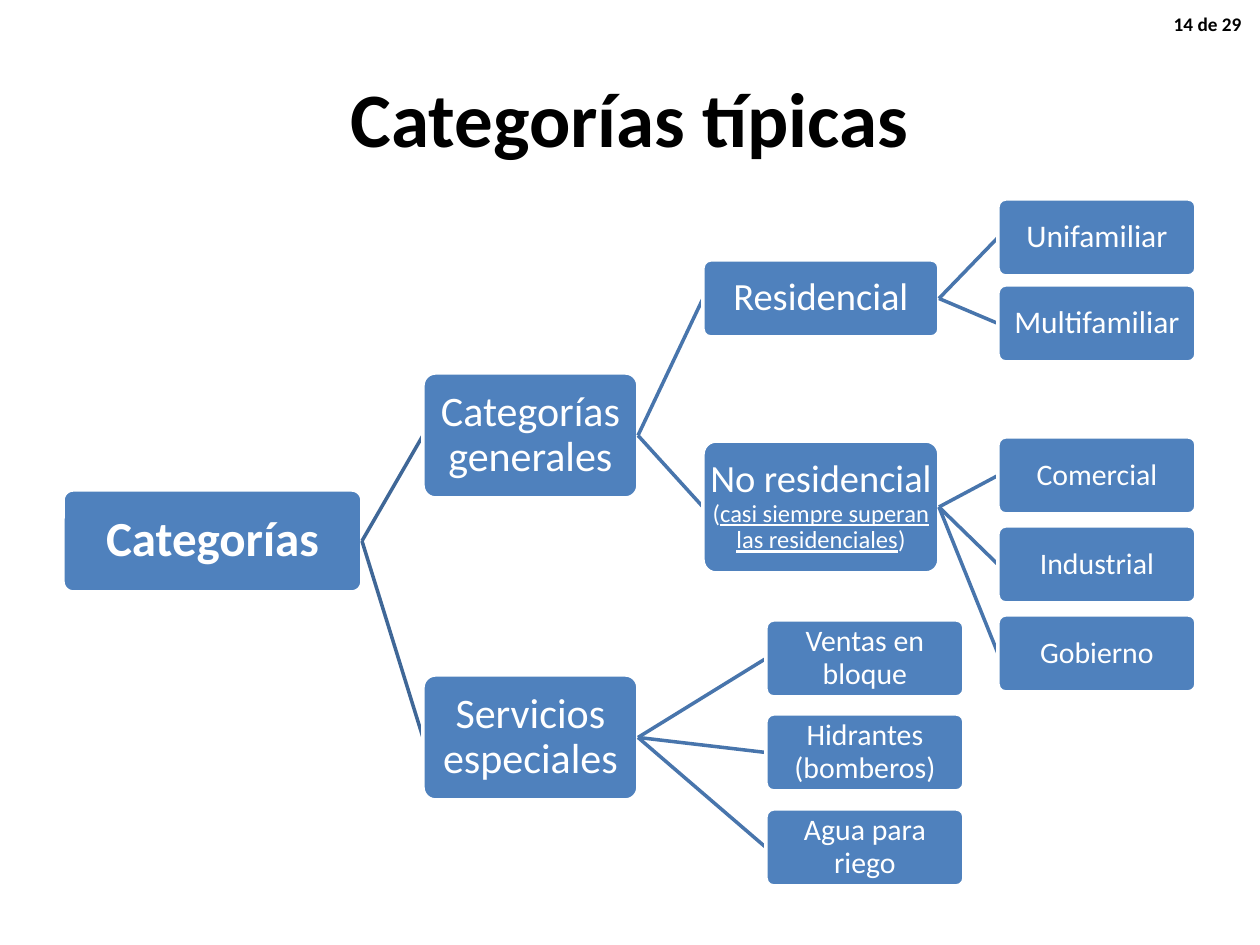
from pptx import Presentation
from pptx.dml.color import RGBColor
from pptx.enum.shapes import MSO_CONNECTOR, MSO_SHAPE
from pptx.enum.text import MSO_ANCHOR, PP_ALIGN
from pptx.oxml.ns import qn
from pptx.util import Pt
from lxml.etree import SubElement

PX = 914400 // 126
FONT = "Calibri"
COLORS = {"box": "4F81BD", "white": "FFFFFF", "black": "000000",
          "root_link": "3F6797", "link": "4875AC"}

TITLE = "Categorías típicas"
PAGE = "14 de 29"
NOTE = [("(", False), ("casi siempre superan las residenciales", True), (")", False)]
NOTE_SIZE = 14

# level: left, width, height, text size
LEVELS = {
    "root": (63, 299, 102, 28),
    "branch": (423, 215, 125, 24),
    "group": (703, 236, 77, 22),
    "group_note": (703, 236, 132, 22),
    "home": (998, 198, 77, 18),
    "business": (998, 198, 77, 17),
    "service": (766, 198, 77, 17),
}
# text, parent, level, top, side inset
NODES = [
    ("Categorías", None, "root", 490, 0),
    ("Categorías generales", "Categorías", "branch", 373, 0),
    ("Residencial", "Categorías generales", "group", 260, 0),
    ("Unifamiliar", "Residencial", "home", 199, 0),
    ("Multifamiliar", "Residencial", "home", 285, 0),
    ("No residencial", "Categorías generales", "group_note", 441, 0),
    ("Comercial", "No residencial", "business", 437, 0),
    ("Industrial", "No residencial", "business", 526, 0),
    ("Gobierno", "No residencial", "business", 615, 0),
    ("Servicios especiales", "Categorías", "branch", 675, 0),
    ("Ventas en bloque", "Servicios especiales", "service", 620, 0),
    ("Hidrantes (bomberos)", "Servicios especiales", "service", 714, 0),
    ("Agua para riego", "Servicios especiales", "service", 809, 12),
]


def rgb(name):
    return RGBColor.from_string(COLORS[name])


def style(p, size, color, align, bold=False):
    p.alignment = align
    p.font.name = FONT
    p.font.size = Pt(size)
    p.font.bold = bold
    p.font.color.rgb = rgb(color)


def add_text(s, box, text, size, align, anchor):
    tf = s.shapes.add_textbox(*(v * PX for v in box)).text_frame
    tf.word_wrap = True
    tf.vertical_anchor = anchor
    p = tf.paragraphs[0]
    p.text = text
    style(p, size, "black", align, True)


def add_node(s, text, level, top, inset):
    left, width, height, size = LEVELS[level]
    sp = s.shapes.add_shape(MSO_SHAPE.ROUNDED_RECTANGLE,
                            left * PX, top * PX, width * PX, height * PX)
    sp.adjustments[0] = 0.1
    sp.shadow.inherit = False
    sp.fill.solid()
    sp.fill.fore_color.rgb = rgb("box")
    sp.line.color.rgb = rgb("white")
    sp.line.width = Pt(2)
    tf = sp.text_frame
    tf.word_wrap = True
    tf.vertical_anchor = MSO_ANCHOR.MIDDLE
    tf.margin_left = tf.margin_right = inset * PX
    tf.margin_top = tf.margin_bottom = 0
    p = tf.paragraphs[0]
    p.line_spacing = 0.9
    style(p, size, "white", PP_ALIGN.CENTER, level == "root")
    p.add_run().text = text + " " if level == "group_note" else text
    if level == "group_note":
        for part, underline in NOTE:
            r = p.add_run()
            r.text = part
            r.font.size = Pt(NOTE_SIZE)
            r.font.underline = underline
    return sp


def add_link(s, parent, color):
    link = s.shapes.add_connector(MSO_CONNECTOR.STRAIGHT, 0, 0, 0, 0)
    link.line.color.rgb = rgb(color)
    link.line.width = Pt(2)
    SubElement(link._element.spPr, qn("a:effectLst"))
    link.begin_connect(parent, 3)
    return link


def main():
    prs = Presentation()
    prs.slide_width, prs.slide_height = 1260 * PX, 945 * PX
    s = prs.slides.add_slide(prs.slide_layouts[6])
    add_text(s, (63, 38, 1134, 157), TITLE, 44, PP_ALIGN.CENTER, MSO_ANCHOR.MIDDLE)
    placed = {}
    for text, parent, level, top, inset in NODES:
        if parent:
            color = "root_link" if level == "branch" else "link"
            link = add_link(s, placed[parent], color)
        placed[text] = add_node(s, text, level, top, inset)
        if parent:
            link.end_connect(placed[text], 1)
    add_text(s, (1159, 6, 95, 36), PAGE, 11, PP_ALIGN.RIGHT, MSO_ANCHOR.TOP)
    prs.save("out.pptx")


if __name__ == "__main__":
    main()
